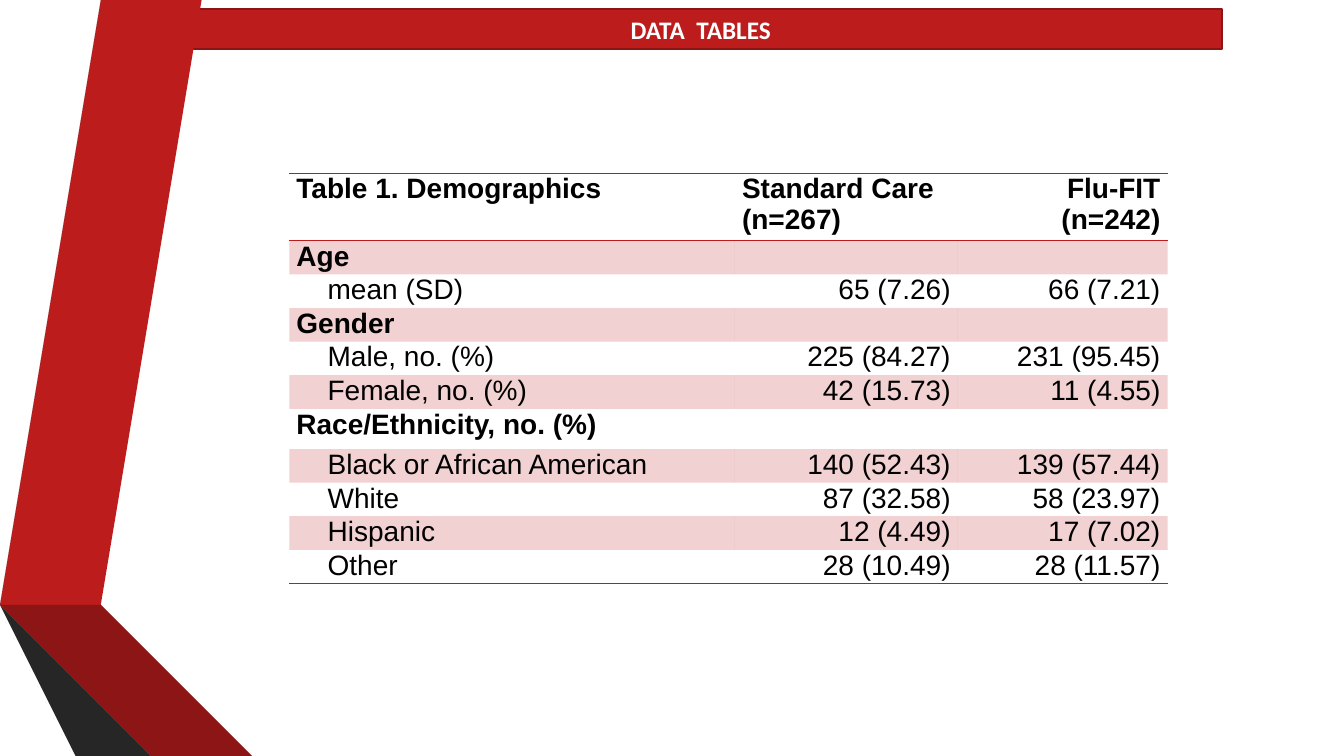
from lxml import etree
from pptx import Presentation
from pptx.dml.color import RGBColor
from pptx.enum.text import MSO_ANCHOR, PP_ALIGN
from pptx.oxml.ns import qn
from pptx.util import Inches, Pt

LEFT, MID, RIGHT = PP_ALIGN.LEFT, PP_ALIGN.CENTER, PP_ALIGN.RIGHT
CENTRE = MSO_ANCHOR.MIDDLE
TITLE_ONLY = 5
NO_STYLE = "{2D5ABB26-0587-4C30-8999-92F81FD0307C}"
RED, EDGE, BLACK, WHITE = "BC1C1C", "8B1515", "000000", "FFFFFF"

# Fill and corners of each ribbon part, back to front
RIBBONS = [
    (RED, [(0.5, 5.78), (0.77, 5.83), (1.73, 0), (1.45, 0)]),
    ("595959", [(1.39, 0), (1.11, 0), (0.16, 5.73), (0.44, 5.77)]),
    ("262626", [(0.16, 5.73), (1.45, 7.5), (1.51, 7.5)]),
    ("5E0E0E", [(0.5, 5.79), (2.08, 7.5), (2.14, 7.5)]),
    ("8D1515", [(0.5, 5.78), (2.14, 7.5), (2.83, 7.5), (0.77, 5.83)]),
    ("404040", [(0.16, 5.73), (1.51, 7.5), (2.02, 7.5), (0.48, 5.83),
                (0.44, 5.77)]),
]

HEAD = ("Table 1. Demographics", "Standard Care\n(n=267)", "Flu-FIT\n(n=242)")
ROWS = [
    HEAD,
    ("Age", "", ""),
    ("mean (SD)", "65 (7.26)", "66 (7.21)"),
    ("Gender", "", ""),
    ("Male, no. (%)", "225 (84.27)", "231 (95.45)"),
    ("Female, no. (%)", "42 (15.73)", "11 (4.55)"),
    ("Race/Ethnicity, no. (%)", "", ""),
    ("Black or African American", "140 (52.43)", "139 (57.44)"),
    ("White", "87 (32.58)", "58 (23.97)"),
    ("Hispanic", "12 (4.49)", "17 (7.02)"),
    ("Other", "28 (10.49)", "28 (11.57)"),
]
WIDTHS = (4.42, 2.21, 2.08)
TALL = 4.07
HIGH = {0: 0.67, 6: 0.4}  # rows taller than the rest


def rgb(code):
    return RGBColor.from_string(code)


def assign(item, values):
    for name, value in values.items():
        setattr(item, name, value)


def style(font, face, size, color, bold):
    assign(font, {"name": face, "size": Pt(size), "bold": bold})
    font.color.rgb = rgb(color)


def paint(item, color):
    item.fill.solid()
    item.fill.fore_color.rgb = rgb(color)


def fade(cell, percent):
    """Set the opacity of a solid cell fill."""
    tint = cell._tc.tcPr.find(qn("a:solidFill"))[0]
    etree.SubElement(tint, qn("a:alpha"), val=str(percent * 1000))


def rule(cell, side):
    """Draw a 1 pt red border on side T or B."""
    line = etree.Element(qn("a:ln" + side), w=str(Pt(1)))
    fill = etree.SubElement(line, qn("a:solidFill"))
    etree.SubElement(fill, qn("a:srgbClr"), val=RED)
    cell._tc.get_or_add_tcPr().insert(0, line)


class Deck:
    def __init__(self):
        self.show = Presentation()
        assign(self.show, {"slide_width": Inches(13.33),
                           "slide_height": Inches(7.5)})
        layout = self.show.slide_layouts[TITLE_ONLY]
        self.slide = self.show.slides.add_slide(layout)
        self.shapes = self.slide.shapes

    def ribbon(self, color, points):
        pen = self.shapes.build_freeform(*points[0], scale=Inches(1))
        pen.add_line_segments(points[1:], close=True)
        shape = pen.convert_to_shape()
        shape.shadow.inherit = False
        paint(shape, color)
        shape.line.fill.background()

    def title(self, text):
        bar = self.shapes.title
        assign(bar, {"left": Inches(1.78), "top": Inches(0.09),
                     "width": Inches(10.34), "height": Inches(0.4)})
        paint(bar, RED)
        bar.line.color.rgb = rgb(EDGE)
        bar.line.width = Pt(1.25)
        frame = bar.text_frame
        frame.text = text
        assign(frame, {"vertical_anchor": CENTRE, "word_wrap": True})
        para = frame.paragraphs[0]
        para.alignment = MID
        style(para.runs[0].font, "Calibri", 18, WHITE, True)

    def table(self):
        count = len(ROWS)
        grid = self.shapes.add_table(
            count, len(WIDTHS), Inches(2.87), Inches(1.72),
            Inches(sum(WIDTHS)), Inches(TALL)).table
        assign(grid, {"first_row": False, "horz_banding": False})
        grid._tbl.tblPr.find(qn("a:tableStyleId")).text = NO_STYLE
        for col, width in zip(grid.columns, WIDTHS):
            col.width = Inches(width)
        base = (TALL - sum(HIGH.values())) / (count - len(HIGH))
        for r, texts in enumerate(ROWS):
            grid.rows[r].height = Inches(HIGH.get(r, base))
            for c, text in enumerate(texts):
                self.cell(grid.cell(r, c), r, c, text)

    def cell(self, cell, r, c, text):
        assign(cell, {"margin_left": Inches(0.07), "margin_top": 0,
                      "margin_right": Inches(0.07), "margin_bottom": 0})
        para = cell.text_frame.paragraphs[0]
        para.text = text
        bold = r == 0 or not ROWS[r][1]
        left = c == 0 or (r == 0 and c == 1)
        para.alignment = LEFT if left else RIGHT
        style(para.font, "Arial", 20, BLACK, bold)
        for run in para.runs:
            style(run.font, "Arial", 20, BLACK, bold)
        if c == 0 and not bold:
            para._p.get_or_add_pPr().set("marL", str(Inches(0.31)))
        if r % 2:
            paint(cell, RED)
            fade(cell, 20)
        else:
            cell.fill.background()
        if r in (0, len(ROWS) - 1):
            rule(cell, "B")
        if r == 0:
            rule(cell, "T")


def main():
    deck = Deck()
    for color, points in RIBBONS:
        deck.ribbon(color, points)
    deck.title("DATA  TABLES")
    deck.table()
    deck.show.save("out.pptx")


if __name__ == "__main__":
    main()
